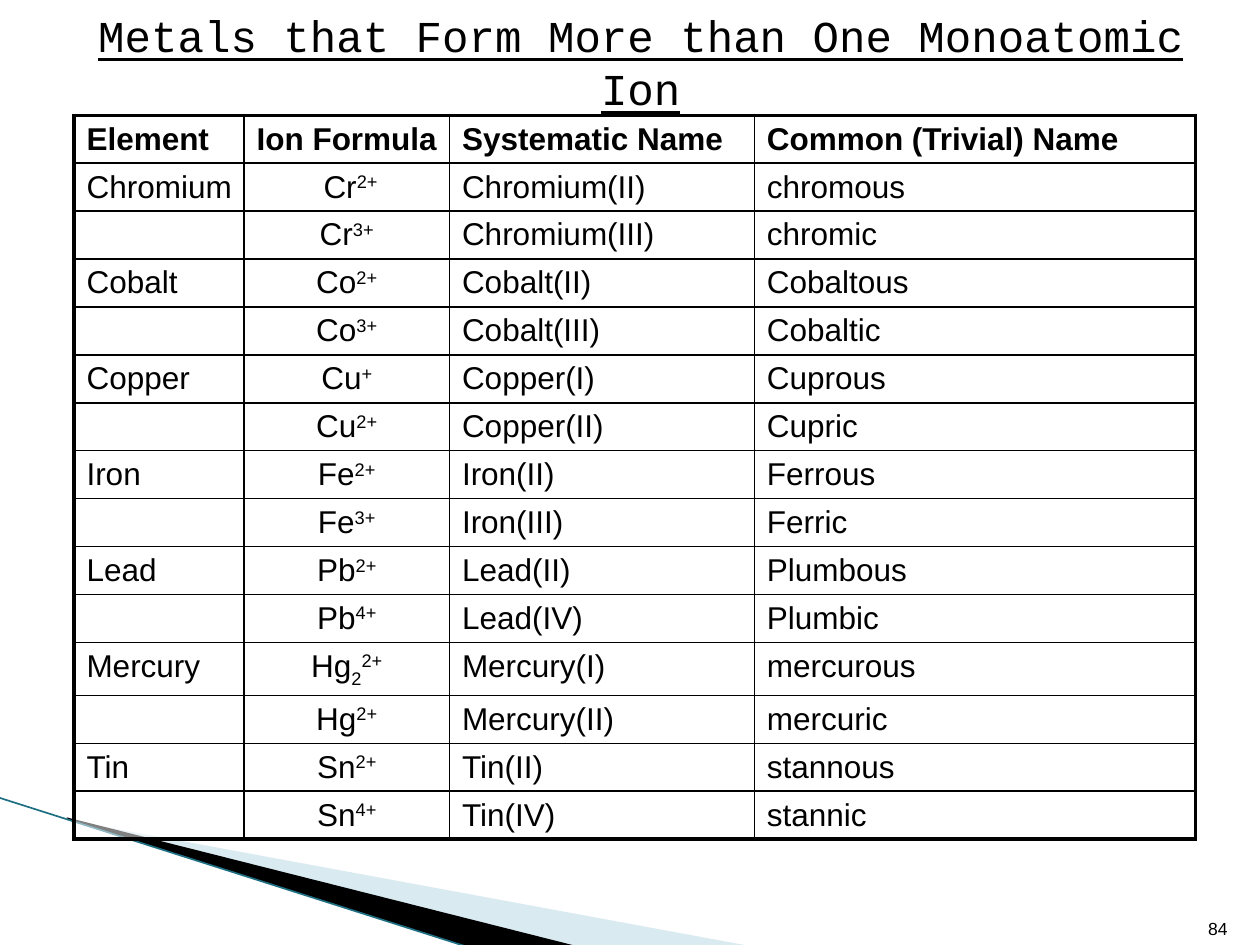
import pptx
import pptx.util
import pptx.dml.color
import pptx.enum.shapes
import pptx.enum.text
import pptx.oxml.ns
import lxml.etree

BLACK = pptx.dml.color.RGBColor(0x00, 0x00, 0x00)
WHITE = pptx.dml.color.RGBColor(0xFF, 0xFF, 0xFF)
PALE_BLUE = pptx.dml.color.RGBColor(0xA0, 0xCB, 0xDC)
TEAL = pptx.dml.color.RGBColor(0x1F, 0x6F, 0x83)
WIDTH, HEIGHT = pptx.util.Inches(10), pptx.util.Inches(7.5)
ALIGN = pptx.enum.text.PP_ALIGN
ANCHOR = pptx.enum.text.MSO_ANCHOR
qn = pptx.oxml.ns.qn

HEADINGS = ["Element", "Ion Formula", "Systematic Name", "Common (Trivial) Name"]
# Element, symbol, then (subscript, charge, numeral, common name) for each ion
METALS = [
    ("Chromium", "Cr", [("", "2+", "II", "chromous"), ("", "3+", "III", "chromic")]),
    ("Cobalt", "Co", [("", "2+", "II", "Cobaltous"), ("", "3+", "III", "Cobaltic")]),
    ("Copper", "Cu", [("", "+", "I", "Cuprous"), ("", "2+", "II", "Cupric")]),
    ("Iron", "Fe", [("", "2+", "II", "Ferrous"), ("", "3+", "III", "Ferric")]),
    ("Lead", "Pb", [("", "2+", "II", "Plumbous"), ("", "4+", "IV", "Plumbic")]),
    ("Mercury", "Hg", [("2", "2+", "I", "mercurous"), ("", "2+", "II", "mercuric")]),
    ("Tin", "Sn", [("", "2+", "II", "stannous"), ("", "4+", "IV", "stannic")]),
]


def write_text(frame, text, subscript="", superscript="", font="Arial", size=18,
               bold=False, underline=False, align=ALIGN.LEFT):
    paragraph = frame.paragraphs[0]
    paragraph.alignment = align
    for part, baseline in ((text, 0), (subscript, -25000), (superscript, 30000)):
        if not part:
            continue
        run = paragraph.add_run()
        run.text = part
        run.font.name, run.font.size = font, pptx.util.Pt(size)
        run.font.bold, run.font.underline = bold, underline
        run.font.color.rgb = BLACK
        if baseline:
            run.font._element.set("baseline", str(baseline))


def fill_solid(fill, properties, color, opacity=100):
    fill.solid()
    fill.fore_color.rgb = color
    if opacity < 100:
        color_element = properties.find(qn("a:solidFill"))[0]
        lxml.etree.SubElement(color_element, qn("a:alpha"), val=str(opacity * 1000))


presentation = pptx.Presentation()
presentation.slide_width, presentation.slide_height = WIDTH, HEIGHT
slide = presentation.slides.add_slide(presentation.slide_layouts[5])

# Corner wedges, in thousandths of the slide
wedges = [
    ([(55, 868), (595, 1001), (456, 1001), (55, 867)], PALE_BLUE, 40),
    ([(53, 865), (457, 1001), (372, 1002), (54, 867)], BLACK, 100),
]
for points, color, opacity in wedges:
    builder = slide.shapes.build_freeform(*points[0], scale=(WIDTH / 1000, HEIGHT / 1000))
    builder.add_line_segments(points[1:], close=True)
    wedge = builder.convert_to_shape()
    wedge.shadow.inherit = False
    wedge.line.fill.background()
    fill_solid(wedge.fill, wedge._element.spPr, color, opacity)

# Line along the wedges
edge = slide.shapes.add_connector(
    pptx.enum.shapes.MSO_CONNECTOR.STRAIGHT,
    int(WIDTH * -0.001), int(HEIGHT * 0.844), int(WIDTH * 0.371), int(HEIGHT * 1.002))
edge.line.color.rgb = TEAL
edge.line.width = pptx.util.Pt(0.95)
lxml.etree.SubElement(edge._element.spPr, qn("a:effectLst"))

# Ion table
row_count = 1 + sum(len(ions) for element, symbol, ions in METALS)
column_shares = [0.135, 0.163, 0.242, 0.35]
row_height = int(HEIGHT * 0.044)
frame = slide.shapes.add_table(
    row_count, len(HEADINGS), int(WIDTH * 0.0587), int(HEIGHT * 0.122),
    int(WIDTH * sum(column_shares)), row_height * row_count)
table = frame.table
table.first_row = table.horz_banding = False
for column, share in zip(table.columns, column_shares):
    column.width = int(WIDTH * share)
for row in table.rows:
    row.height = row_height

for column_index, heading in enumerate(HEADINGS):
    write_text(table.cell(0, column_index).text_frame, heading, bold=True)

row_index = 1
for element, symbol, ions in METALS:
    write_text(table.cell(row_index, 0).text_frame, element)
    for subscript, charge, numeral, common_name in ions:
        write_text(table.cell(row_index, 1).text_frame, symbol, subscript=subscript,
                   superscript=charge, align=ALIGN.CENTER)
        write_text(table.cell(row_index, 2).text_frame, f"{element}({numeral})")
        write_text(table.cell(row_index, 3).text_frame, common_name)
        row_index += 1

# Cell fills and borders, heavier around the outside
for row_index in range(row_count):
    for column_index in range(len(HEADINGS)):
        cell = table.cell(row_index, column_index)
        # Tight headings and names need a narrower right margin
        if column_index < 2 and (row_index < 2 or column_index == 0):
            cell.margin_right = pptx.util.Inches(0.04)
        if not cell.text_frame.text:
            paragraph = cell.text_frame.paragraphs[0]
            lxml.etree.SubElement(paragraph._p, qn("a:endParaRPr"), sz="1400")
        properties = cell._tc.get_or_add_tcPr()
        fill_solid(cell.fill, properties, WHITE, 50)
        sides = [
            ("a:lnL", column_index == 0),
            ("a:lnR", column_index == len(HEADINGS) - 1),
            ("a:lnT", row_index == 0),
            ("a:lnB", row_index == row_count - 1),
        ]
        for position, (side, outside) in enumerate(sides):
            border = lxml.etree.Element(
                qn(side), w=str(int(pptx.util.Pt(2.25 if outside else 1))))
            border_fill = lxml.etree.SubElement(border, qn("a:solidFill"))
            lxml.etree.SubElement(border_fill, qn("a:srgbClr"), val=str(BLACK))
            properties.insert(position, border)

# Page number
page_number = slide.shapes.add_textbox(
    int(WIDTH * 0.892), int(HEIGHT * 0.935), int(WIDTH * 0.092), int(HEIGHT * 0.065))
page_number.text_frame.word_wrap = True
page_number.text_frame.vertical_anchor = ANCHOR.BOTTOM
write_text(page_number.text_frame, "84", size=10, align=ALIGN.RIGHT)

# Title, in front of the table
title = slide.shapes.title
title.left, title.top = int(WIDTH * 0.05), int(HEIGHT * 0.007)
title.width, title.height = int(WIDTH * 0.917), int(HEIGHT * 0.116)
title.text_frame.auto_size = pptx.enum.text.MSO_AUTO_SIZE.NONE
title.text_frame.vertical_anchor = ANCHOR.MIDDLE
write_text(title.text_frame, "Metals that Form More than One Monoatomic Ion",
           font="Courier New", size=25.2, underline=True, align=ALIGN.CENTER)
slide.shapes._spTree.append(title._element)

presentation.save("out.pptx")
